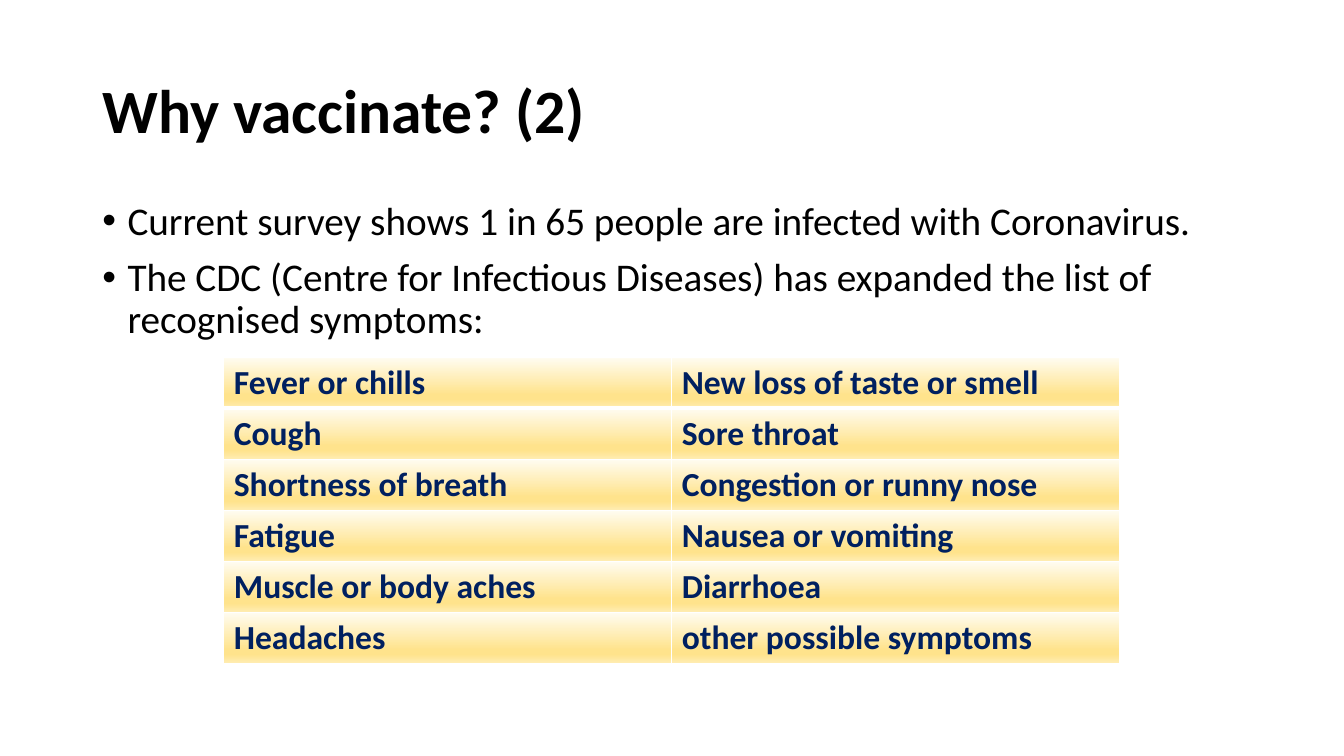
from lxml import etree
from pptx import Presentation
from pptx.dml.color import RGBColor
from pptx.enum.text import MSO_ANCHOR
from pptx.oxml.ns import qn
from pptx.util import Cm, Pt

MIDDLE = MSO_ANCHOR.MIDDLE
TOP = MSO_ANCHOR.TOP

FONT = "Calibri"
BLACK, NAVY, WHITE = "000000", "002060", "FFFFFF"
GOLD_STOPS = [(0, "FFFCF2"), (74, "FFE38C"), (83, "FFE38C"), (100, "FFECB2")]

BULLETS = [
    "Current survey shows 1 in 65 people are infected with Coronavirus.",
    "The CDC (Centre for Infectious Diseases) has expanded the list of "
    "recognised symptoms:",
]
SYMPTOMS = [
    ("Fever or chills", "New loss of taste or smell"),
    ("Cough", "Sore throat"),
    ("Shortness of breath", "Congestion or runny nose"),
    ("Fatigue", "Nausea or vomiting"),
    ("Muscle or body aches", "Diarrhoea"),
    ("Headaches", "other possible symptoms"),
]


def color(hex_text):
    return RGBColor.from_string(hex_text)


def add_run(paragraph, text, size, hex_text, bold=False):
    run = paragraph.add_run()
    run.text = text
    run.font.name = FONT
    run.font.size = Pt(size)
    run.font.bold = bold
    run.font.color.rgb = color(hex_text)


def add_text_frame(slide, left, top, width, height, anchor):
    box = slide.shapes.add_textbox(Cm(left), Cm(top), Cm(width), Cm(height))
    box.text_frame.word_wrap = True
    box.text_frame.vertical_anchor = anchor
    return box.text_frame


def add_title(slide, text):
    frame = add_text_frame(slide, 2.33, 1.01, 29.21, 3.68, MIDDLE)
    paragraph = frame.paragraphs[0]
    paragraph.line_spacing = 0.9
    add_run(paragraph, text, 44, BLACK, bold=True)


def add_bullets(slide, texts):
    frame = add_text_frame(slide, 2.33, 4.95, 29.21, 12.09, TOP)
    for index, text in enumerate(texts):
        paragraph = frame.add_paragraph() if index else frame.paragraphs[0]
        paragraph.line_spacing = 0.9
        paragraph.space_before = Pt(10)
        add_run(paragraph, text, 28, BLACK)
        # Hanging bullet
        properties = paragraph._p.get_or_add_pPr()
        indent = int(Cm(0.635))
        properties.set("marL", str(indent))
        properties.set("indent", str(-indent))
        etree.SubElement(properties, qn("a:buFont")).set("typeface", "Arial")
        etree.SubElement(properties, qn("a:buChar")).set("char", "•")


def add_color_element(parent, hex_text):
    etree.SubElement(parent, qn("a:srgbClr")).set("val", hex_text)


def style_cell(cell, bottom_width):
    properties = cell._tc.get_or_add_tcPr()
    # White borders
    for side, width in (("L", 1), ("R", 1), ("T", 1), ("B", bottom_width)):
        line = etree.SubElement(properties, qn(f"a:ln{side}"))
        line.set("w", str(int(Pt(width))))
        add_color_element(etree.SubElement(line, qn("a:solidFill")), WHITE)
    # Vertical gold gradient
    gradient = etree.SubElement(properties, qn("a:gradFill"))
    stops = etree.SubElement(gradient, qn("a:gsLst"))
    for percent, hex_text in GOLD_STOPS:
        stop = etree.SubElement(stops, qn("a:gs"))
        stop.set("pos", str(percent * 1000))
        add_color_element(stop, hex_text)
    etree.SubElement(gradient, qn("a:lin")).set("ang", str(90 * 60000))


def add_symptom_table(slide, rows):
    row_height = 1.285
    frame = slide.shapes.add_table(
        len(rows), 2, Cm(5.64), Cm(9), Cm(22.58), Cm(row_height * len(rows)))
    table = frame.table
    table.horz_banding = False
    for row_index, texts in enumerate(rows):
        table.rows[row_index].height = Cm(row_height)
        for column_index, text in enumerate(texts):
            cell = table.cell(row_index, column_index)
            add_run(cell.text_frame.paragraphs[0], text, 24, NAVY, bold=True)
            # Heavier line under the first row
            style_cell(cell, 3 if row_index == 0 else 1)


def main():
    presentation = Presentation()
    presentation.slide_width = Cm(33.87)
    presentation.slide_height = Cm(19.05)
    slide = presentation.slides.add_slide(presentation.slide_layouts[6])

    add_title(slide, "Why vaccinate? (2)")
    add_bullets(slide, BULLETS)
    add_symptom_table(slide, SYMPTOMS)

    presentation.save("out.pptx")


if __name__ == "__main__":
    main()
